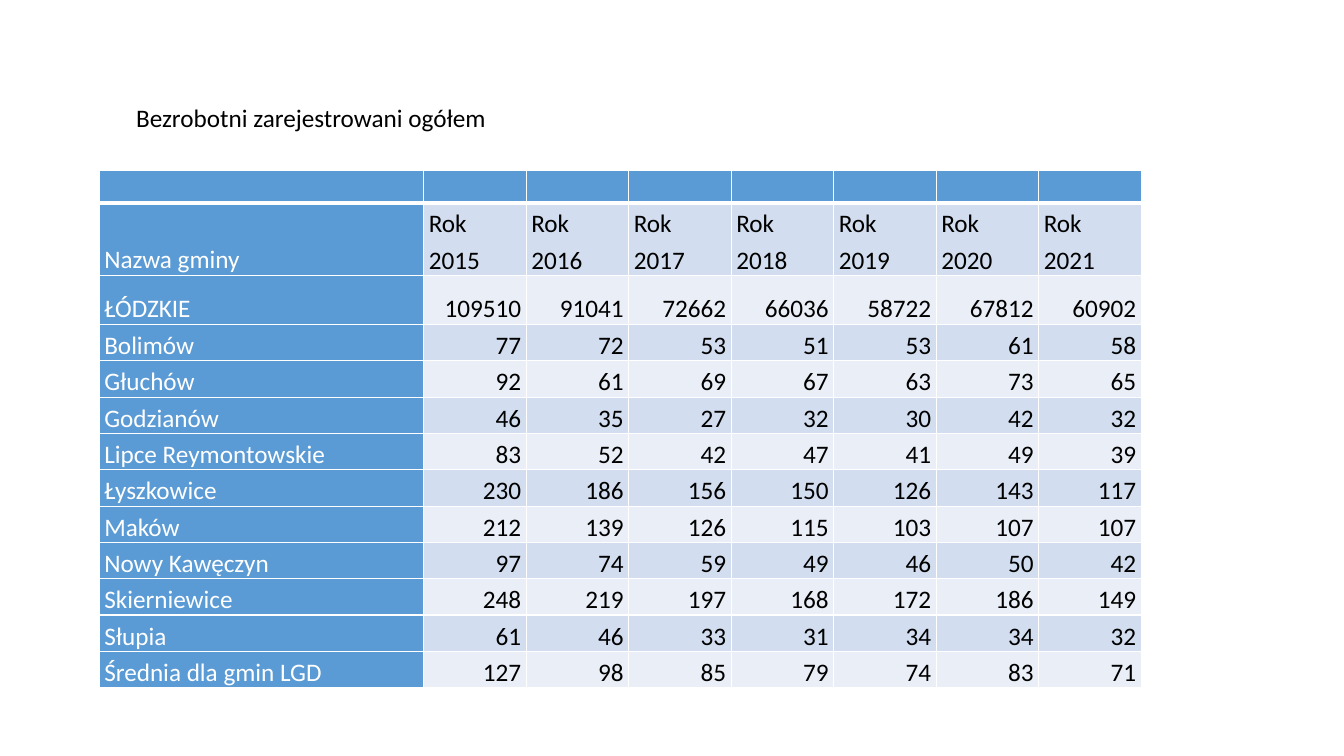
from dataclasses import dataclass

from lxml import etree
from pptx import Presentation
from pptx.dml.color import RGBColor
from pptx.enum.text import MSO_ANCHOR, MSO_AUTO_SIZE, PP_ALIGN
from pptx.oxml.ns import qn
from pptx.slide import Slide
from pptx.table import _Cell
from pptx.text.text import TextFrame
from pptx.util import Pt

LEFT, RIGHT, JUSTIFY = PP_ALIGN.LEFT, PP_ALIGN.RIGHT, PP_ALIGN.JUSTIFY
TOP, BOTTOM = MSO_ANCHOR.TOP, MSO_ANCHOR.BOTTOM
FIT_SHAPE = MSO_AUTO_SIZE.SHAPE_TO_FIT_TEXT


@dataclass(frozen=True)
class Theme:
    font: str = "Calibri"
    size: float = 18
    text: str = "000000"
    white: str = "FFFFFF"
    accent: str = "5B9BD5"
    bands: tuple[str, str] = ("D2DEEF", "EAEFF7")
    rule: float = 1
    heavy_rule: float = 3


@dataclass(frozen=True)
class Commune:
    name: str
    unemployed: tuple[int, ...]


THEME = Theme()
YEARS = range(2015, 2022)
COMMUNES = [
    Commune("ŁÓDZKIE", (109510, 91041, 72662, 66036, 58722, 67812, 60902)),
    Commune("Bolimów", (77, 72, 53, 51, 53, 61, 58)),
    Commune("Głuchów", (92, 61, 69, 67, 63, 73, 65)),
    Commune("Godzianów", (46, 35, 27, 32, 30, 42, 32)),
    Commune("Lipce Reymontowskie", (83, 52, 42, 47, 41, 49, 39)),
    Commune("Łyszkowice", (230, 186, 156, 150, 126, 143, 117)),
    Commune("Maków", (212, 139, 126, 115, 103, 107, 107)),
    Commune("Nowy Kawęczyn", (97, 74, 59, 49, 46, 50, 42)),
    Commune("Skierniewice", (248, 219, 197, 168, 172, 186, 149)),
    Commune("Słupia", (61, 46, 33, 31, 34, 34, 32)),
    Commune("Średnia dla gmin LGD", (127, 98, 85, 79, 74, 83, 71)),
]
NAME_WIDTH, YEAR_WIDTH = 231.8, 73.23
ROW_HEIGHT, YEARS_HEIGHT, REGION_HEIGHT = 23, 47.5, 35.2


def write(tf: TextFrame, text: str, *, color: str = THEME.text, align: PP_ALIGN = LEFT,
          spacing: float = 1, gap: float = 0) -> None:
    """Fill a text frame with one formatted paragraph."""
    p = tf.paragraphs[0]
    p.alignment = align
    p.line_spacing = spacing
    p.space_before = p.space_after = Pt(gap)
    if text:
        r = p.add_run()
        r.text = text
        r.font.name = THEME.font
        r.font.size = Pt(THEME.size)
        r.font.bold = False
        r.font.color.rgb = RGBColor.from_string(color)


def set_borders(cell: _Cell, top: float, bottom: float) -> None:
    """Draw white rules on the four sides of a cell."""
    tc_pr = cell._tc.get_or_add_tcPr()
    widths = {"lnL": THEME.rule, "lnR": THEME.rule, "lnT": top, "lnB": bottom}
    for side, width in widths.items():
        ln = etree.SubElement(tc_pr, qn(f"a:{side}"), w=str(Pt(width)))
        fill = etree.SubElement(ln, qn("a:solidFill"))
        etree.SubElement(fill, qn("a:srgbClr"), val=THEME.white)


def format_cell(cell: _Cell, text: str, row: int, col: int) -> None:
    """Style a cell by its place in the table and write its text."""
    is_head = row == 0 or col == 0
    set_borders(cell,
                top=THEME.heavy_rule if row == 1 else THEME.rule,
                bottom=THEME.heavy_rule if row == 0 else THEME.rule)
    cell.fill.solid()
    color = THEME.accent if is_head else THEME.bands[(row - 1) % 2]
    cell.fill.fore_color.rgb = RGBColor.from_string(color)
    cell.vertical_anchor = BOTTOM
    cell.margin_left = cell.margin_right = Pt(3.6)
    cell.margin_top = cell.margin_bottom = Pt(0)
    write(cell.text_frame, text, color=THEME.white if is_head else THEME.text,
          align=RIGHT if row > 1 and col > 0 else JUSTIFY, spacing=1.2, gap=6)


def add_title(s: Slide, text: str) -> None:
    """Place and format the slide title."""
    sp = s.shapes.title
    sp.left, sp.top, sp.width, sp.height = Pt(90), Pt(69.8), Pt(267), Pt(29)
    tf = sp.text_frame
    tf.word_wrap = False
    tf.auto_size = FIT_SHAPE
    tf.vertical_anchor = TOP
    write(tf, text)


def add_unemployment_table(s: Slide) -> None:
    """Add the table of unemployed people by commune and year."""
    rows = [[""] * (len(YEARS) + 1), ["Nazwa gminy", *(f"Rok {year}" for year in YEARS)]]
    rows += [[c.name, *map(str, c.unemployed)] for c in COMMUNES]
    widths = [NAME_WIDTH] + [YEAR_WIDTH] * len(YEARS)
    heights = [ROW_HEIGHT, YEARS_HEIGHT, REGION_HEIGHT] + [ROW_HEIGHT] * (len(rows) - 3)
    table = s.shapes.add_table(len(rows), len(widths), Pt(70.9), Pt(121.8),
                               Pt(sum(widths)), Pt(sum(heights))).table
    table.first_row = table.horz_banding = False
    for column, width in zip(table.columns, widths):
        column.width = Pt(width)
    for i, (texts, height) in enumerate(zip(rows, heights)):
        table.rows[i].height = Pt(height)
        for j, text in enumerate(texts):
            format_cell(table.cell(i, j), text, i, j)


def main() -> None:
    """Build the slide and save it."""
    prs = Presentation()
    prs.slide_width, prs.slide_height = Pt(960), Pt(540)
    s = prs.slides.add_slide(prs.slide_layouts[5])
    add_title(s, "Bezrobotni zarejestrowani ogółem")
    add_unemployment_table(s)
    prs.save("out.pptx")


if __name__ == "__main__":
    main()
